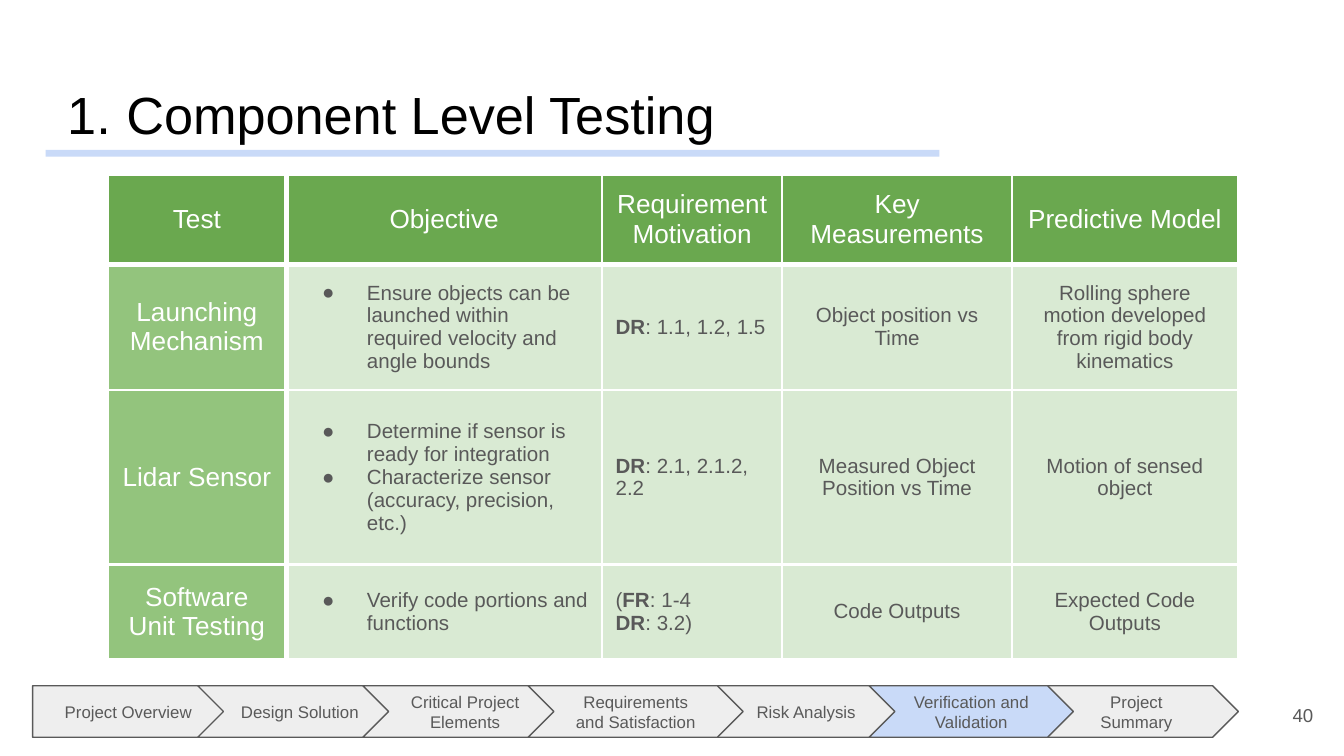
from lxml.etree import SubElement
from pptx import Presentation
from pptx.dml.color import RGBColor
from pptx.enum.shapes import MSO_SHAPE
from pptx.enum.text import MSO_ANCHOR, PP_ALIGN
from pptx.oxml.ns import qn
from pptx.util import Pt

HUES = {
    "ink": "000000", "gray": "595959", "white": "FFFFFF", "pale": "EEEEEE",
    "blue": "C9DAF8", "head": "6AA84F", "side": "93C47D", "body": "D9EAD3",
}
INSET = 7.2
COLS = [95.8, 169.2, 96.5, 123.1, 121]
ROWS = [47.5, 62, 93.6, 50.4]
CELLS = [
    ["Test", "Objective", "Requirement Motivation", "Key Measurements",
     "Predictive Model"],
    ["Launching Mechanism",
     "Ensure objects can be launched within required velocity and angle bounds",
     "*DR*: 1.1, 1.2, 1.5", "Object position vs Time",
     "Rolling sphere motion developed from rigid body kinematics"],
    ["Lidar Sensor",
     "Determine if sensor is ready for integration\n"
     "Characterize sensor (accuracy, precision, etc.)",
     "*DR*: 2.1, 2.1.2, 2.2", "Measured Object Position vs Time",
     "Motion of sensed object"],
    ["Software Unit Testing", "Verify code portions and functions",
     "(*FR*: 1-4\n*DR*: 3.2)", "Code Outputs", "Expected Code Outputs"],
]
STEPS = ["Project Overview", "Design Solution", "Critical Project Elements",
         "Requirements and Satisfaction", "Risk Analysis",
         "Verification and Validation", "Project Summary"]
STACK = [0, 1, 2, 6, 4, 3, 5]
ACTIVE = 5


def color(name):
    """Return the named colour."""
    return RGBColor.from_string(HUES[name])


def add_mark(para, hue, indent, tag, **attrs):
    """Give a paragraph a hanging bullet or number."""
    props = para._p.get_or_add_pPr()
    props.set("marL", str(Pt(36)))
    props.set("indent", str(Pt(-indent)))
    tint = SubElement(props, qn("a:buClr"))
    SubElement(tint, qn("a:srgbClr"), val=HUES[hue])
    SubElement(props, qn("a:buFont"), typeface="Arial")
    SubElement(props, qn(tag), **attrs)


def style(para, size, hue, align):
    """Set alignment and font of a paragraph."""
    para.alignment = align
    para.font.size = Pt(size)
    para.font.name = "Arial"
    para.font.color.rgb = color(hue)


def write(frame, text, size, hue, align=PP_ALIGN.CENTER, bullet=False):
    """Write lines of text, with bold parts between asterisks."""
    frame.word_wrap = True
    for i, line in enumerate(text.split("\n")):
        para = frame.add_paragraph() if i else frame.paragraphs[0]
        if bullet:
            add_mark(para, hue, 24, "a:buChar", char="●")
        style(para, size, hue, align)
        for j, part in enumerate(line.split("*")):
            if part:
                run = para.add_run()
                run.text = part
                if j % 2:
                    run.font.bold = True


def pad(frame):
    """Set equal insets and centre the text vertically."""
    frame.margin_left = frame.margin_right = Pt(INSET)
    frame.margin_top = frame.margin_bottom = Pt(INSET)
    frame.vertical_anchor = MSO_ANCHOR.MIDDLE


def add_form(slide, kind, box, fill):
    """Add a plain filled shape without outline or shadow."""
    form = slide.shapes.add_shape(kind, *map(Pt, box))
    form.shadow.inherit = False
    form.fill.solid()
    form.fill.fore_color.rgb = color(fill)
    form.line.fill.background()
    return form


def add_steps(slide, box):
    """Draw the progress bar of overlapping chevrons."""
    left, top, width, high = box
    lap, extra = 20.9, 5.8
    base = (width - extra + lap * (len(STEPS) - 1)) / len(STEPS)
    wide = [base + extra * (i == 3) for i in range(len(STEPS))]
    for i in STACK:
        x = left + sum(wide[:i]) - lap * i
        kind = MSO_SHAPE.CHEVRON if i else MSO_SHAPE.PENTAGON
        fill = "blue" if i == ACTIVE else "pale"
        form = add_form(slide, kind, (x, top, wide[i], high), fill)
        form.line.color.rgb = color("gray")
        form.line.width = Pt(0.75)
        pad(form.text_frame)
        write(form.text_frame, STEPS[i], 9, "gray")


def add_title(slide, box):
    """Place the numbered title and the rule under it."""
    left, top, width, high = box
    add_form(slide, MSO_SHAPE.RECTANGLE, (left, top + high, 478.8, 3.6), "blue")
    title = slide.shapes.title
    title.left, title.top, title.width, title.height = map(Pt, box)
    frame = title.text_frame
    pad(frame)
    frame.vertical_anchor = MSO_ANCHOR.BOTTOM
    frame.margin_bottom = Pt(2.5)
    frame.text = "Component Level Testing"
    para = frame.paragraphs[0]
    add_mark(para, "ink", 31.7, "a:buAutoNum", type="arabicPeriod")
    style(para, 28, "ink", PP_ALIGN.LEFT)


def add_edges(cell, row, col):
    """Draw white borders, thicker beside the headers."""
    thick = {"L": col == 1, "R": col == 0, "T": row == 1, "B": row == 0}
    props = cell._tc.get_or_add_tcPr()
    for side, bold in thick.items():
        edge = SubElement(props, qn("a:ln" + side), w=str(Pt(3 if bold else 1.5)))
        fill = SubElement(edge, qn("a:solidFill"))
        SubElement(fill, qn("a:srgbClr"), val=HUES["white"])


def add_grid(slide, box):
    """Build the table of tests."""
    table = slide.shapes.add_table(len(ROWS), len(COLS), *map(Pt, box)).table
    table.first_row = table.horz_banding = False
    for col, width in zip(table.columns, COLS):
        col.width = Pt(width)
    for row, high in zip(table.rows, ROWS):
        row.height = Pt(high)
    for r, texts in enumerate(CELLS):
        for c, text in enumerate(texts):
            cell = table.cell(r, c)
            add_edges(cell, r, c)
            cell.fill.solid()
            fill = "head" if r == 0 else "side" if c == 0 else "body"
            cell.fill.fore_color.rgb = color(fill)
            pad(cell)
            cell.margin_top = cell.margin_bottom = Pt(INSET)
            inner = r > 0 and c > 0
            size, hue = (11, "gray") if inner else (14, "white")
            align = PP_ALIGN.LEFT if inner and c < 3 else PP_ALIGN.CENTER
            write(cell.text_frame, text, size, hue, align, inner and c == 1)


def add_page(slide, box):
    """Place the page number."""
    frame = slide.shapes.add_textbox(*map(Pt, box)).text_frame
    pad(frame)
    write(frame, "40", 10, "gray", PP_ALIGN.RIGHT)


def main():
    """Build and save the slide."""
    deck = Presentation()
    deck.slide_width, deck.slide_height = Pt(720), Pt(405)
    slide = deck.slides.add_slide(deck.slide_layouts[5])
    add_steps(slide, (17.5, 367.4, 646, 27.6))
    add_title(slide, (24.5, 35.3, 671, 45))
    add_page(slide, (667.4, 367.4, 43.2, 31))
    add_grid(slide, (57.6, 93.6, sum(COLS), sum(ROWS)))
    deck.save("out.pptx")


if __name__ == "__main__":
    main()
